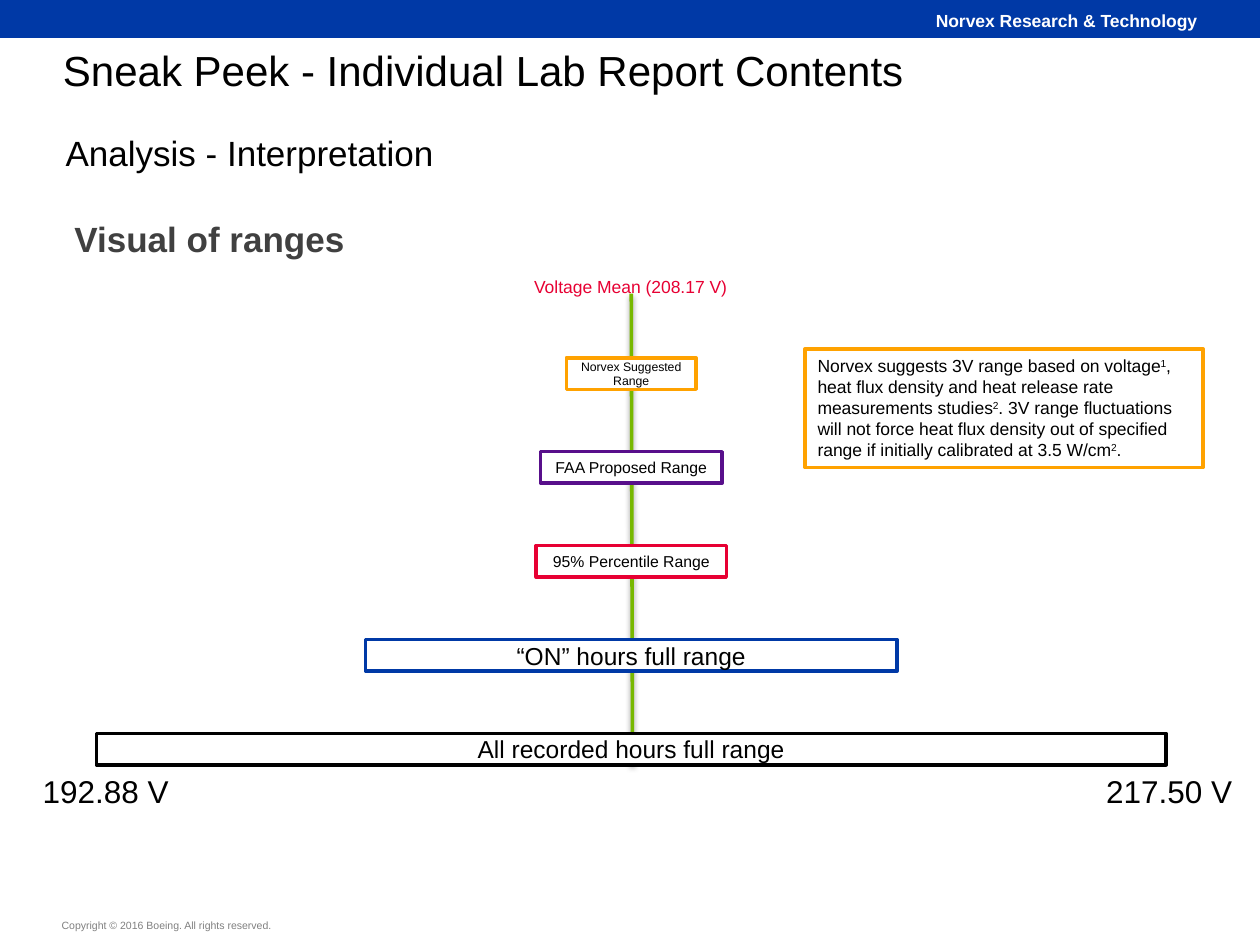
import pptx
import pptx.util
from lxml import etree
from pptx.dml.color import RGBColor
from pptx.enum.shapes import MSO_CONNECTOR, MSO_SHAPE
from pptx.enum.text import MSO_ANCHOR, MSO_AUTO_SIZE, PP_ALIGN
from pptx.oxml.ns import qn
from pptx.util import Inches

BLACK = RGBColor(0x00, 0x00, 0x00)
WHITE = RGBColor(0xFF, 0xFF, 0xFF)
GREY = RGBColor(0x80, 0x80, 0x80)
DARK_GREY = RGBColor(0x40, 0x40, 0x40)
BLUE = RGBColor(0x00, 0x39, 0xA6)
GREEN = RGBColor(0x77, 0xB8, 0x00)
RED = RGBColor(0xE7, 0x00, 0x33)
PURPLE = RGBColor(0x58, 0x0F, 0x8B)
ORANGE = RGBColor(0xFF, 0xA2, 0x00)

DEFAULT_INSETS = (0.1, 0.05, 0.1, 0.05)
TITLE_INSETS = (0, 0.05, 0, 0)
NO_INSETS = (0, 0, 0, 0)


class SlideBuilder:
    """Holds the style and the current slide."""

    font_name = "Arial"
    line_width = pptx.util.Pt(2)

    def __init__(self, page):
        self.page = page

    def fill_text(self, shape, spans, size, color=BLACK, bold=False, align=PP_ALIGN.LEFT,
                  anchor=MSO_ANCHOR.TOP, insets=DEFAULT_INSETS, wrap=True, spacing=1.0):
        """Fill a shape with one paragraph; every second span is superscript."""
        frame = shape.text_frame
        frame.auto_size = MSO_AUTO_SIZE.NONE
        frame.word_wrap = wrap
        frame.vertical_anchor = anchor
        (frame.margin_left, frame.margin_top,
         frame.margin_right, frame.margin_bottom) = map(Inches, insets)
        para = frame.paragraphs[0]
        para.alignment = align
        para.line_spacing = spacing
        para.space_before = pptx.util.Pt(0)
        for index, words in enumerate(spans):
            span = para.add_run()
            span.text = words
            if index % 2:
                span._r.get_or_add_rPr().set("baseline", "30000")
        para.font.name = self.font_name
        para.font.size = pptx.util.Pt(size)
        para.font.bold = bold
        para.font.color.rgb = color

    def text(self, place, words, size, **style):
        box = self.page.shapes.add_textbox(*map(Inches, place))
        self.fill_text(box, [words], size, **style)

    def placeholder(self, holder, place, words, size, **style):
        holder.left, holder.top, holder.width, holder.height = map(Inches, place)
        properties = holder.text_frame.paragraphs[0]._p.get_or_add_pPr()
        properties.set("marL", "0")
        properties.set("indent", "0")
        etree.SubElement(properties, qn("a:buNone"))
        self.fill_text(holder, [words], size, spacing=0.9, **style)

    def rectangle(self, place, fill, line=None):
        box = self.page.shapes.add_shape(MSO_SHAPE.RECTANGLE, *map(Inches, place))
        box.shadow.inherit = False
        box.fill.solid()
        box.fill.fore_color.rgb = fill
        if line is None:
            box.line.fill.background()
        else:
            box.line.color.rgb = line
            box.line.width = self.line_width
        return box

    def shadowed_line(self, start, end, color):
        line = self.page.shapes.add_connector(
            MSO_CONNECTOR.STRAIGHT, *map(Inches, start + end))
        line.line.color.rgb = color
        line.line.width = self.line_width
        effects = etree.SubElement(line._element.spPr, qn("a:effectLst"))
        shadow = etree.SubElement(effects, qn("a:outerShdw"), blurRad="40000",
                                  dist="20000", dir="5400000", rotWithShape="0")
        shade = etree.SubElement(shadow, qn("a:srgbClr"), val="000000")
        etree.SubElement(shade, qn("a:alpha"), val="38000")


def main():
    deck = pptx.Presentation()
    deck.slide_width, deck.slide_height = Inches(10), Inches(7.5)
    page = deck.slides.add_slide(deck.slide_layouts[1])
    builder = SlideBuilder(page)

    # Header band and footer
    builder.rectangle((0, -0.01, 10, 0.31), BLUE)
    builder.text((4.01, 0.08, 5.49, 0.17), "Norvex Research & Technology", 10,
                 color=WHITE, bold=True, align=PP_ALIGN.RIGHT, insets=NO_INSETS)
    builder.text((0.48, 7.28, 2.26, 0.12), "Copyright © 2016 Boeing. All rights reserved.",
                 6, color=GREY, anchor=MSO_ANCHOR.BOTTOM, insets=(0.01,) * 4)

    # Headings
    builder.text((0.5, 0.35, 9, 0.41), "Sneak Peek - Individual Lab Report Contents", 24,
                 insets=TITLE_INSETS, spacing=0.9)
    builder.placeholder(page.shapes.title, (0.52, 1.03, 8.99, 0.35),
                        "Analysis - Interpretation", 20, insets=TITLE_INSETS)
    builder.placeholder(page.placeholders[1], (0.59, 1.76, 8.92, 0.3),
                        "Visual of ranges", 20, color=DARK_GREY, bold=True,
                        insets=NO_INSETS)

    # Mean line
    builder.shadowed_line((5.01, 2.33), (5.02, 6.07), GREEN)
    builder.text((4.14, 2.14, 1.75, 0.27), "Voltage Mean (208.17 V)", 10,
                 color=RED, wrap=False)

    # Range bars, centred on the mean and evenly spaced
    ranges = [
        ("Norvex Suggested Range", 1.03, 7, ORANGE),
        ("FAA Proposed Range", 1.44, 9, PURPLE),
        ("95% Percentile Range", 1.51, 9, RED),
        ("“ON” hours full range", 4.22, 14, BLUE),
        ("All recorded hours full range", 8.49, 14, BLACK),
    ]
    center, first_top, last_top = 5.01, 2.84, 5.82
    step = (last_top - first_top) / (len(ranges) - 1)
    for index, (label, width, size, color) in enumerate(ranges):
        place = (center - width / 2, first_top + index * step, width, 0.25)
        bar = builder.rectangle(place, WHITE, color)
        builder.fill_text(bar, [label], size, align=PP_ALIGN.CENTER,
                          anchor=MSO_ANCHOR.MIDDLE)

    # Ends of the full range
    for left, label in ((0.24, "192.88 V"), (8.68, "217.50 V")):
        builder.text((left, 6.08, 1.21, 0.4), label, 18, wrap=False)

    # Explanatory note
    note = builder.rectangle((6.39, 2.77, 3.16, 0.94), WHITE, ORANGE)
    builder.fill_text(note, [
        "Norvex suggests 3V range based on voltage", "1",
        ", heat flux density and heat release rate measurements studies", "2",
        ". 3V range fluctuations will not force heat flux density out of specified range "
        "if initially calibrated at 3.5 W/cm", "2", ".",
    ], 10)

    deck.save("out.pptx")


if __name__ == "__main__":
    main()
